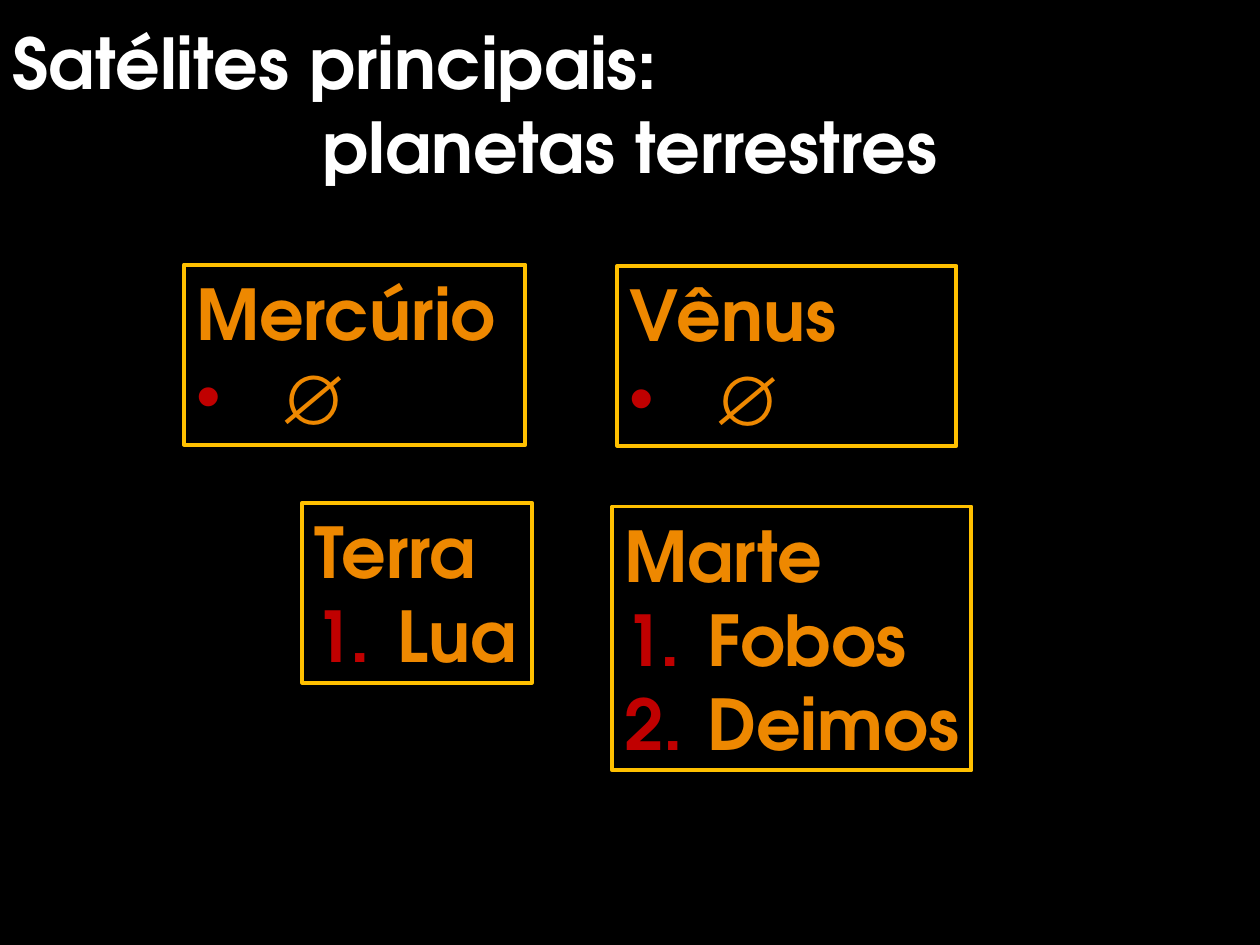
"""Build a slide listing the main moons of the terrestrial planets."""
from dataclasses import dataclass

from lxml import etree
from pptx import Presentation
from pptx.dml.color import RGBColor
from pptx.enum.text import MSO_ANCHOR, MSO_AUTO_SIZE, PP_ALIGN
from pptx.oxml.ns import qn
from pptx.util import Inches, Pt

LEFT, CENTER = PP_ALIGN.LEFT, PP_ALIGN.CENTER
TOP, MIDDLE = MSO_ANCHOR.TOP, MSO_ANCHOR.MIDDLE
FIXED = MSO_AUTO_SIZE.NONE

TITLE = [("Satélites principais:", LEFT), ("planetas terrestres", CENTER)]
NONE = "∅"
CARDS = [
    ("Terra", ["Lua"], 2.4, 3.99, 1.82),
    ("Marte", ["Fobos", "Deimos"], 4.86, 4.02, 2.85),
    ("Mercúrio", [NONE], 1.46, 2.1, 2.71),
    ("Vênus", [NONE], 4.9, 2.11, 2.69),
]


@dataclass(frozen=True)
class Theme:
    """Hold the colours, fonts and sizes of the slide."""

    back: str = "000000"
    title: str = "FFFFFF"
    text: str = "EE8800"
    mark: str = "C00000"
    edge: str = "FFC000"
    font: str = "TeX Gyre Adventor"
    sign: str = "Arial"
    size: int = 40
    line: float = 2.25
    pitch: float = 0.665
    pad: float = 0.1
    hang: float = 0.5


THEME = Theme()


def style(para, color, font=THEME.font, align=LEFT):
    """Format a paragraph and its runs."""
    para.alignment = align
    for run in para.runs:
        run.font.name = font
        run.font.size = Pt(THEME.size)
        run.font.bold = True
        run.font.color.rgb = RGBColor.from_string(color)


def indent(para):
    """Give a paragraph a hanging indent."""
    props = para._p.get_or_add_pPr()
    props.set("marL", str(Inches(THEME.hang)))
    props.set("indent", str(-Inches(THEME.hang)))
    return props


def bullet(para, numbered):
    """Mark a paragraph with a number or a dot."""
    props = indent(para)
    color = etree.SubElement(props, qn("a:buClr"))
    etree.SubElement(color, qn("a:srgbClr"), val=THEME.mark)
    if numbered:
        etree.SubElement(props, qn("a:buFont"), typeface="+mj-lt")
        etree.SubElement(props, qn("a:buAutoNum"), type="arabicPeriod")
    else:
        etree.SubElement(props, qn("a:buFont"), typeface=THEME.sign)
        etree.SubElement(props, qn("a:buChar"), char="•")


def add_title(slide):
    """Fill and place the title."""
    title = slide.shapes.title
    title.left, title.top = Inches(0), Inches(0.57)
    title.width, title.height = Inches(10), Inches(0.5)
    frame = title.text_frame
    frame.text = "\n".join(text for text, _ in TITLE)
    frame.auto_size = FIXED
    frame.vertical_anchor = MIDDLE
    for para, (_, align) in zip(frame.paragraphs, TITLE):
        style(para, THEME.title, align=align)


def add_card(slide, planet, moons, left, top, width):
    """Add a framed planet name with its moons."""
    height = THEME.pad + THEME.pitch * (1 + len(moons))
    box = slide.shapes.add_textbox(
        Inches(left), Inches(top), Inches(width), Inches(height)
    )
    box.line.color.rgb = RGBColor.from_string(THEME.edge)
    box.line.width = Pt(THEME.line)
    frame = box.text_frame
    frame.auto_size = FIXED
    frame.word_wrap = False
    frame.vertical_anchor = TOP
    frame.text = planet
    head = frame.paragraphs[0]
    style(head, THEME.text)
    indent(head)
    for moon in moons:
        para = frame.add_paragraph()
        para.text = f" {moon}"
        empty = moon == NONE
        style(para, THEME.text, THEME.sign if empty else THEME.font)
        bullet(para, not empty)


def main():
    """Build and save the slide."""
    deck = Presentation()
    deck.slide_width, deck.slide_height = Inches(10), Inches(7.5)
    slide = deck.slides.add_slide(deck.slide_layouts[5])
    fill = slide.background.fill
    fill.solid()
    fill.fore_color.rgb = RGBColor.from_string(THEME.back)
    add_title(slide)
    for card in CARDS:
        add_card(slide, *card)
    deck.save("out.pptx")


if __name__ == "__main__":
    main()
